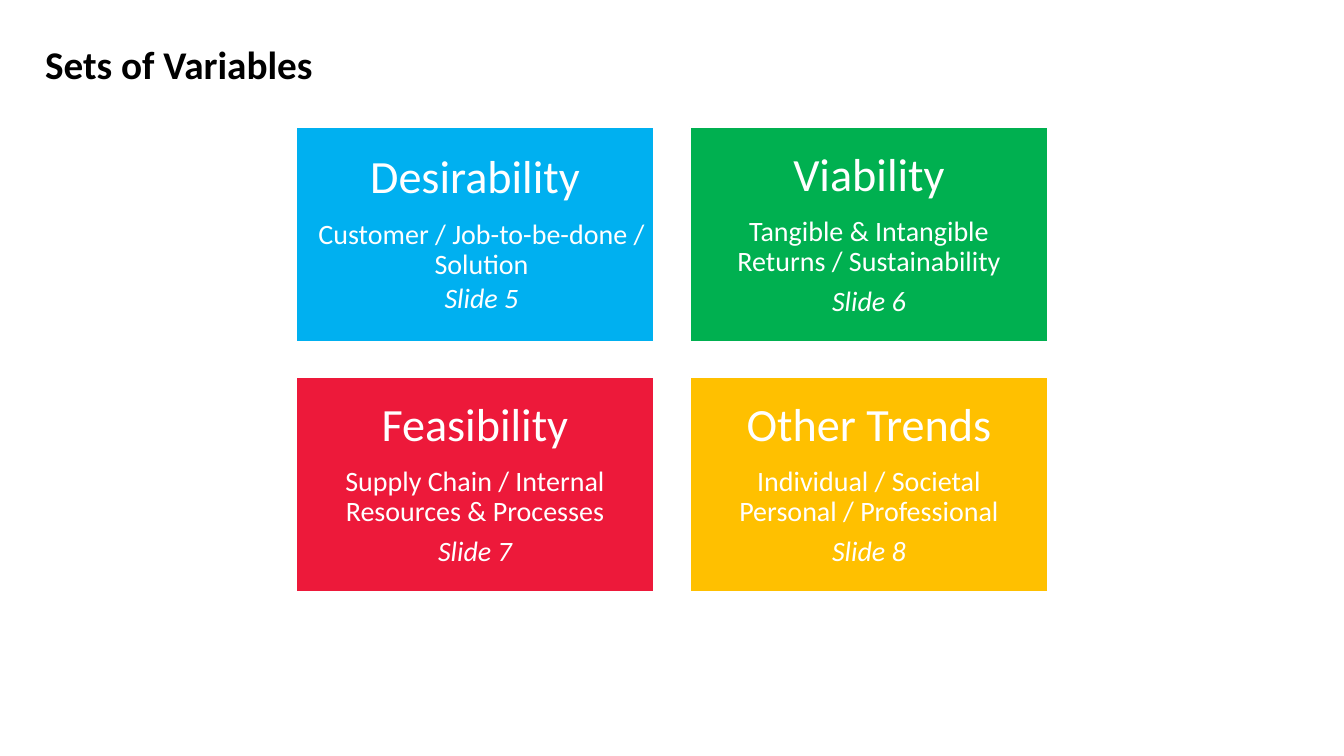
from pptx import Presentation
from pptx.dml.color import RGBColor
from pptx.enum.shapes import MSO_SHAPE
from pptx.enum.text import MSO_ANCHOR, MSO_AUTO_SIZE, PP_ALIGN
from pptx.util import Pt

RECTANGLE = MSO_SHAPE.RECTANGLE
TOP, MIDDLE = MSO_ANCHOR.TOP, MSO_ANCHOR.MIDDLE
LEFT, CENTER = PP_ALIGN.LEFT, PP_ALIGN.CENTER
NO_AUTOFIT = MSO_AUTO_SIZE.NONE

BLACK = RGBColor(0x00, 0x00, 0x00)
WHITE = RGBColor(0xFF, 0xFF, 0xFF)
BLUE = RGBColor(0x00, 0xB0, 0xF0)
GREEN = RGBColor(0x00, 0xB0, 0x50)
RED = RGBColor(0xED, 0x19, 0x3A)
AMBER = RGBColor(0xFF, 0xC0, 0x00)

FONT = "Calibri"
TITLE = "Sets of Variables"
CARDS = [
    dict(heading="Desirability", body="Customer / Job-to-be-done / Solution",
         reference="Slide 5", color=BLUE, inset=8, indent=13, gap=3),
    dict(heading="Viability", body="Tangible & Intangible Returns / Sustainability",
         reference="Slide 6", color=GREEN, inset=14, indent=0, gap=7),
    dict(heading="Feasibility", body="Supply Chain / Internal Resources & Processes",
         reference="Slide 7", color=RED, inset=10, indent=0, gap=7),
    dict(heading="Other Trends", body="Individual / Societal Personal / Professional",
         reference="Slide 8", color=AMBER, inset=20, indent=0, gap=7),
]

SLIDE_WIDTH, SLIDE_HEIGHT = 1344, 756
TITLE_BOX = (35, 35, 1301, 501)
COLUMNS = 2
GRID_LEFT, GRID_TOP = 296, 127
CARD_WIDTH, CARD_HEIGHT = 358, 215
COLUMN_STEP, ROW_STEP = 394, 250


def px(length):
    return round(length * 914400 / 100.8)


def write(paragraph, text, size, color, bold=False, italic=False, align=CENTER,
          line_spacing=0.9, after=0, indent=0):
    paragraph.text = text
    paragraph.alignment = align
    paragraph.line_spacing = line_spacing
    paragraph.space_before = Pt(0)
    paragraph.space_after = Pt(after)
    if indent:
        properties = paragraph._p.get_or_add_pPr()
        properties.set("marL", str(px(indent)))
        properties.set("indent", "0")
    font = paragraph.runs[0].font
    font.name = FONT
    font.size = Pt(size)
    font.bold = bold
    font.italic = italic
    font.color.rgb = color


def add_title(slide):
    title = slide.shapes.title
    title.left, title.top, title.width, title.height = map(px, TITLE_BOX)
    frame = title.text_frame
    frame.auto_size = NO_AUTOFIT
    frame.vertical_anchor = TOP
    write(frame.paragraphs[0], TITLE, 28, BLACK, bold=True, align=LEFT,
          line_spacing=1.0, after=4)


def add_card(slide, index, card):
    row, column = divmod(index, COLUMNS)
    shape = slide.shapes.add_shape(
        RECTANGLE, px(GRID_LEFT + column * COLUMN_STEP), px(GRID_TOP + row * ROW_STEP),
        px(CARD_WIDTH), px(CARD_HEIGHT))
    shape.shadow.inherit = False
    shape.fill.solid()
    shape.fill.fore_color.rgb = card["color"]
    shape.line.color.rgb = WHITE
    shape.line.width = Pt(1)
    frame = shape.text_frame
    frame.word_wrap = True
    frame.vertical_anchor = MIDDLE
    inset = px(card["inset"])
    frame.margin_left = frame.margin_right = inset
    frame.margin_top = frame.margin_bottom = inset
    write(frame.paragraphs[0], card["heading"], 33, WHITE, after=11.5)
    for key in ("body", "reference"):
        write(frame.add_paragraph(), card[key], 20, WHITE, italic=key == "reference",
              after=card["gap"], indent=card["indent"])


def main():
    presentation = Presentation()
    presentation.slide_width = px(SLIDE_WIDTH)
    presentation.slide_height = px(SLIDE_HEIGHT)
    slide = presentation.slides.add_slide(presentation.slide_layouts[5])
    add_title(slide)
    for index, card in enumerate(CARDS):
        add_card(slide, index, card)
    presentation.save("out.pptx")


if __name__ == "__main__":
    main()
